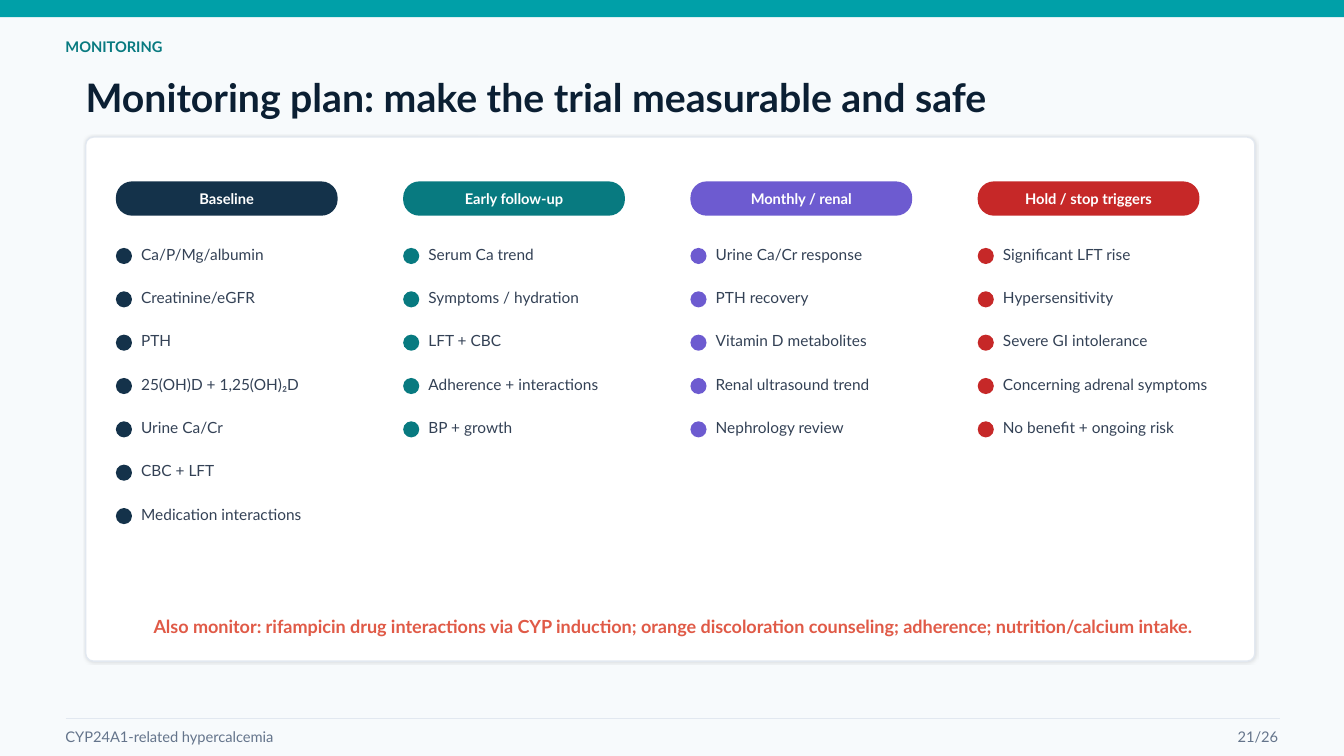
from dataclasses import dataclass

from lxml import etree
from pptx import Presentation
from pptx.dml.color import RGBColor
from pptx.enum.shapes import MSO_CONNECTOR, MSO_SHAPE
from pptx.enum.text import MSO_ANCHOR, PP_ALIGN
from pptx.oxml.ns import qn
from pptx.util import Pt

RECTANGLE = MSO_SHAPE.RECTANGLE
ROUNDED = MSO_SHAPE.ROUNDED_RECTANGLE
OVAL = MSO_SHAPE.OVAL
STRAIGHT = MSO_CONNECTOR.STRAIGHT
MIDDLE = MSO_ANCHOR.MIDDLE
LEFT, CENTER, RIGHT = PP_ALIGN.LEFT, PP_ALIGN.CENTER, PP_ALIGN.RIGHT

FONT = "Lato"
COLORS = {
    "background": "F7FAFC",
    "bar": "00A0A8",
    "teal": "087A80",
    "title": "0B1F33",
    "rule": "E2E8F0",
    "footer": "64748B",
    "white": "FFFFFF",
    "navy": "14324A",
    "purple": "6D5BD0",
    "red": "C62828",
    "body": "334155",
    "coral": "E05A47",
    "shadow": "000000",
}

MARGIN = 46.8
COLUMN_LEFT, COLUMN_STEP = 82.8, 205.2
PILL_TOP, PILL_WIDTH, PILL_HEIGHT = 129.6, 158.4, 24.48
ITEM_TOP, ITEM_STEP = 174.24, 30.96
ITEM_WIDTH, ITEM_HEIGHT, ITEM_INDENT = 156.96, 14.4, 18
DOT_SIZE, DOT_DROP = 11.52, 2.88


@dataclass
class Box:
    left: float
    top: float
    width: float
    height: float

    def lengths(self):
        return Pt(self.left), Pt(self.top), Pt(self.width), Pt(self.height)


@dataclass
class Column:
    heading: str
    color: str
    items: list[str]


COLUMNS = [
    Column("Baseline", "navy", [
        "Ca/P/Mg/albumin", "Creatinine/eGFR", "PTH", "25(OH)D + 1,25(OH)₂D",
        "Urine Ca/Cr", "CBC + LFT", "Medication interactions",
    ]),
    Column("Early follow-up", "teal", [
        "Serum Ca trend", "Symptoms / hydration", "LFT + CBC",
        "Adherence + interactions", "BP + growth",
    ]),
    Column("Monthly / renal", "purple", [
        "Urine Ca/Cr response", "PTH recovery", "Vitamin D metabolites",
        "Renal ultrasound trend", "Nephrology review",
    ]),
    Column("Hold / stop triggers", "red", [
        "Significant LFT rise", "Hypersensitivity", "Severe GI intolerance",
        "Concerning adrenal symptoms", "No benefit + ongoing risk",
    ]),
]


def rgb(name: str) -> RGBColor:
    return RGBColor.from_string(COLORS[name])


def write_text(shape, text: str, *, size: float, color: str,
               bold: bool = False, align=LEFT) -> None:
    frame = shape.text_frame
    frame.word_wrap = True
    frame.vertical_anchor = MIDDLE
    frame.margin_left = frame.margin_right = 0
    frame.margin_top = frame.margin_bottom = 0
    paragraph = frame.paragraphs[0]
    paragraph.alignment = align
    run = paragraph.add_run()
    run.text = text
    run.font.name = FONT
    run.font.size = Pt(size)
    run.font.bold = bold
    run.font.color.rgb = rgb(color)


def add_label(slide, box: Box, text: str, **text_format) -> None:
    write_text(slide.shapes.add_textbox(*box.lengths()), text, **text_format)


def add_filled(slide, kind, box: Box, color: str):
    shape = slide.shapes.add_shape(kind, *box.lengths())
    shape.shadow.inherit = False
    shape.fill.solid()
    shape.fill.fore_color.rgb = rgb(color)
    shape.line.fill.background()
    return shape


def add_card(slide, box: Box) -> None:
    card = add_filled(slide, ROUNDED, box, "white")
    card.adjustments[0] = 0.015
    card.line.color.rgb = rgb("rule")
    card.line.width = Pt(1)
    effects = card.element.spPr.find(qn("a:effectLst"))
    shadow = etree.SubElement(
        effects, qn("a:outerShdw"), blurRad=str(Pt(1.5)), dist=str(Pt(0.7)),
        dir="2700000", algn="ctr", rotWithShape="0")
    color = etree.SubElement(shadow, qn("a:srgbClr"), val=COLORS["shadow"])
    etree.SubElement(color, qn("a:alpha"), val="12000")


def add_rule(slide, left: float, right: float, top: float) -> None:
    rule = slide.shapes.add_connector(
        STRAIGHT, Pt(left), Pt(top), Pt(right), Pt(top))
    rule.line.color.rgb = rgb("rule")
    rule.line.width = Pt(1)
    etree.SubElement(rule.element.spPr, qn("a:effectLst"))


def add_column(slide, column: Column, left: float) -> None:
    pill = add_filled(slide, ROUNDED,
                      Box(left, PILL_TOP, PILL_WIDTH, PILL_HEIGHT), column.color)
    pill.adjustments[0] = 0.471
    write_text(pill, column.heading, size=10.5, color="white",
               bold=True, align=CENTER)
    for row, item in enumerate(column.items):
        top = ITEM_TOP + row * ITEM_STEP
        add_filled(slide, OVAL,
                   Box(left, top + DOT_DROP, DOT_SIZE, DOT_SIZE), column.color)
        add_label(slide, Box(left + ITEM_INDENT, top, ITEM_WIDTH, ITEM_HEIGHT),
                  item, size=11, color="body")


def main() -> None:
    presentation = Presentation()
    presentation.slide_width = Pt(960)
    presentation.slide_height = Pt(540)
    slide = presentation.slides.add_slide(presentation.slide_layouts[6])
    slide.background.fill.solid()
    slide.background.fill.fore_color.rgb = rgb("background")

    add_filled(slide, RECTANGLE, Box(0, 0, 960, 12.24), "bar")
    add_label(slide, Box(MARGIN, 24.48, 187.2, 18), "MONITORING",
              size=10.5, color="teal", bold=True)
    add_label(slide, Box(61.2, 48.24, 777.6, 41.76),
              "Monitoring plan: make the trial measurable and safe",
              size=28, color="title", bold=True)

    add_rule(slide, MARGIN, 914.4, 513.36)
    add_label(slide, Box(MARGIN, 519.84, 417.6, 12.96),
              "CYP24A1-related hypercalcemia", size=10.5, color="footer")
    add_label(slide, Box(869.76, 519.84, 43.2, 12.96), "21/26",
              size=10.5, color="footer", align=RIGHT)

    add_card(slide, Box(61.2, 97.92, 835.2, 374.4))
    for index, column in enumerate(COLUMNS):
        add_column(slide, column, COLUMN_LEFT + index * COLUMN_STEP)
    add_label(slide, Box(COLUMN_LEFT, 437.04, 795.6, 20.16),
              "Also monitor: rifampicin drug interactions via CYP induction; "
              "orange discoloration counseling; adherence; "
              "nutrition/calcium intake.",
              size=12.9, color="coral", bold=True, align=CENTER)

    presentation.save("out.pptx")


if __name__ == "__main__":
    main()
